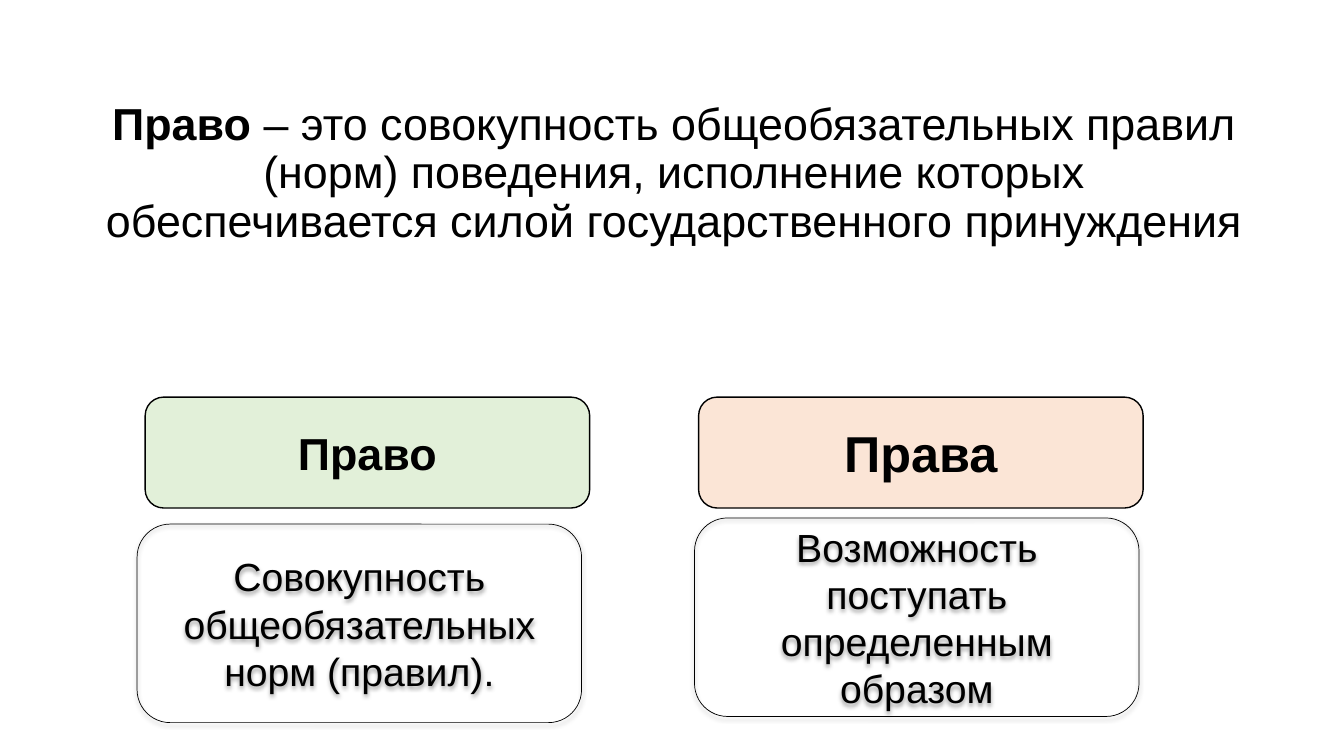
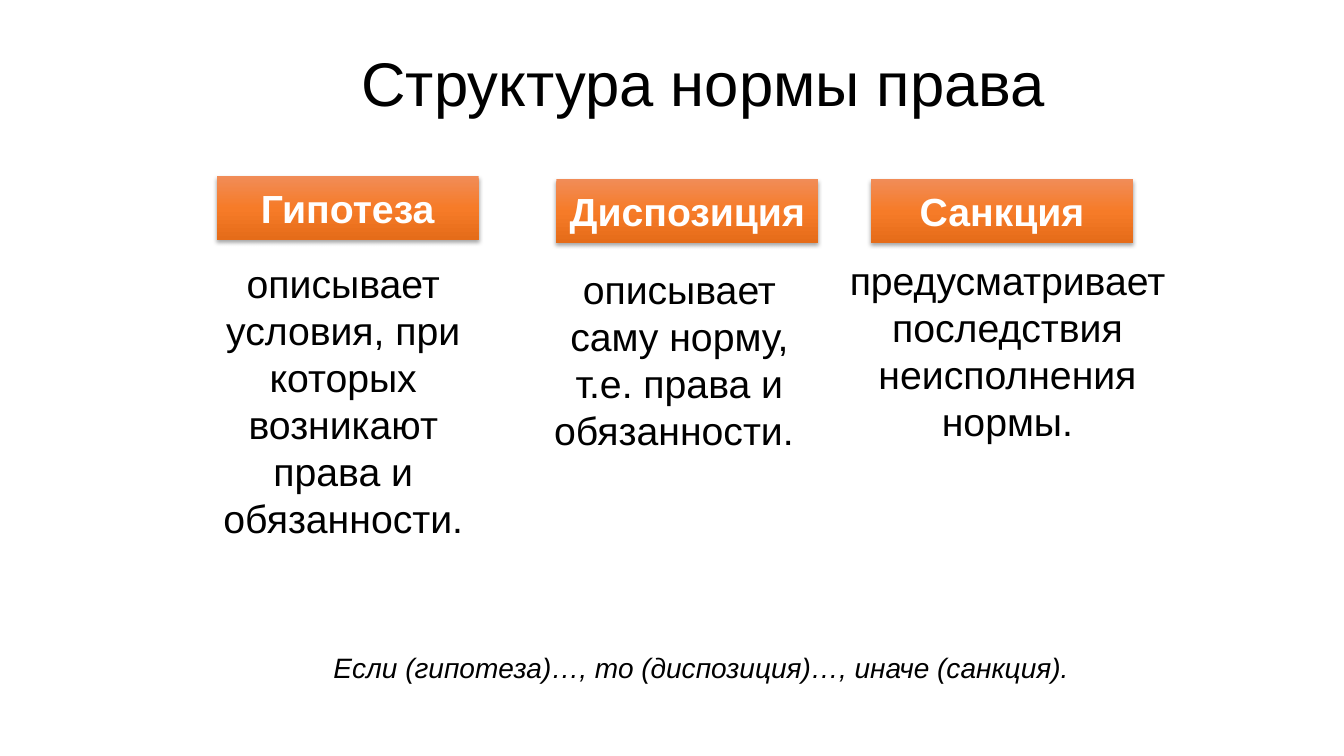
"""Builds two slides on the notion of law and the structure of a legal norm."""
from copy import deepcopy
from dataclasses import dataclass

from lxml.etree import SubElement
from pptx import Presentation
from pptx.dml.color import RGBColor
from pptx.enum.shapes import MSO_SHAPE
from pptx.enum.text import MSO_ANCHOR, MSO_AUTO_SIZE, PP_ALIGN
from pptx.oxml.ns import qn
from pptx.util import Pt


@dataclass(frozen=True)
class Theme:
    font: str = "Arial"
    ink: str = "000000"
    paper: str = "FFFFFF"
    green: str = "E2F0D9"
    peach: str = "FBE5D6"
    orange: tuple = ("F18C57", "F67B28", "E56C19")
    title_size: int = 44
    large_size: int = 36
    lead_size: int = 32
    text_size: int = 28
    note_size: int = 20


class Slides:
    def __init__(self, theme):
        self.theme = theme
        self.deck = Presentation()
        self.deck.slide_width, self.deck.slide_height = Pt(960), Pt(540)
        self.page = None

    def add_page(self, layout_name):
        layout = self.deck.slide_layouts.get_by_name(layout_name)
        self.page = self.deck.slides.add_slide(layout)

    def add_spans(self, box, spans, size, color=None, align=PP_ALIGN.CENTER, italic=False):
        frame = box.text_frame
        frame.word_wrap = True
        para = frame.paragraphs[0]
        para.alignment = align
        for text, bold in spans:
            span = para.add_run()
            span.text = text
            font = span.font
            font.name, font.size = self.theme.font, Pt(size)
            font.bold, font.italic = bold, italic
            font.color.rgb = RGBColor.from_string(color or self.theme.ink)
        return para

    def place(self, box, area):
        box.left, box.top, box.width, box.height = map(Pt, area)
        box.text_frame.auto_size = MSO_AUTO_SIZE.NONE

    def title(self, area, text):
        box = self.page.shapes.title
        self.place(box, area)
        box.text_frame.vertical_anchor = MSO_ANCHOR.MIDDLE
        self.add_spans(box, [(text, False)], self.theme.title_size).line_spacing = 0.9

    def body(self, area, spans):
        box = self.page.placeholders[1]
        self.place(box, area)
        para = self.add_spans(box, spans, self.theme.lead_size)
        para.line_spacing, para.space_before = 0.9, Pt(10)
        properties = para._p.get_or_add_pPr()
        properties.set("marL", "0")
        properties.set("indent", "0")
        SubElement(properties, qn("a:buNone"))
        title = self.page.shapes.title
        title._element.getparent().remove(title._element)

    def text(self, area, text, size, **style):
        box = self.page.shapes.add_textbox(*map(Pt, area))
        self.add_spans(box, [(text, False)], size, **style)

    def shape(self, kind, area):
        box = self.page.shapes.add_shape(kind, *map(Pt, area))
        box.shadow.inherit = False
        box.text_frame.vertical_anchor = MSO_ANCHOR.MIDDLE
        return box

    def shadow(self, box, opacity, distance):
        effects = box._element.spPr.find(qn("a:effectLst"))
        outer = SubElement(effects, qn("a:outerShdw"), blurRad=str(Pt(3.1)),
                           dist=str(Pt(distance)), dir="5400000", rotWithShape="0")
        color = SubElement(outer, qn("a:srgbClr"), val=self.theme.ink)
        SubElement(color, qn("a:alpha"), val=str(opacity * 1000))

    def rounded(self, area, text, size, fill=None):
        box = self.shape(MSO_SHAPE.ROUNDED_RECTANGLE, area)
        frame = box.text_frame
        frame.margin_left = frame.margin_right = Pt(5.8)
        frame.margin_top = frame.margin_bottom = Pt(2.9)
        box.line.color.rgb = RGBColor.from_string(self.theme.ink)
        if fill:
            box.fill.solid()
            box.fill.fore_color.rgb = RGBColor.from_string(fill)
            box.line.width = Pt(1)
        else:
            box.fill.background()
            box.line.width = Pt(0.5)
            self.shadow(box, 38, 1.6)
        self.add_spans(box, [(text, bool(fill))], size)

    def label(self, area, text):
        box = self.shape(MSO_SHAPE.RECTANGLE, area)
        box.line.fill.background()
        box.fill.gradient()
        box.fill.gradient_angle = 270
        stops = box._element.spPr.find(qn("a:gradFill")).find(qn("a:gsLst"))
        stops.append(deepcopy(stops[-1]))
        colors = self.theme.orange
        for index, stop in enumerate(box.fill.gradient_stops):
            stop.position = index / (len(colors) - 1)
            stop.color.rgb = RGBColor.from_string(colors[index])
        self.shadow(box, 35, 1.8)
        self.add_spans(box, [(text, True)], self.theme.text_size, self.theme.paper)


def build_definition(slides):
    theme = slides.theme
    slides.add_page("Title and Content")
    slides.body((67.7, 69, 828, 343), [
        ("Право", True),
        (" – это совокупность общеобязательных правил (норм) поведения, "
         "исполнение которых обеспечивается силой государственного принуждения", False),
    ])
    columns = [
        (103.7, "Право", theme.lead_size, theme.green,
         97.9, 374.4, "Совокупность общеобязательных норм (правил)."),
        (499, "Права", theme.large_size, theme.peach,
         496.1, 370, "Возможность поступать определенным образом"),
    ]
    for left, term, size, fill, text_left, text_top, meaning in columns:
        slides.rounded((left, 283.7, 317.5, 79.2), term, size, fill)
        slides.rounded((text_left, text_top, 317.5, 141.8), meaning, theme.text_size)


def build_structure(slides):
    theme = slides.theme
    slides.add_page("Title Only")
    slides.title((88.6, 9.4, 828, 104.4), "Структура нормы права")
    columns = [
        (154.8, 126, "Гипотеза", (133.9, 181.4, 222.5, 211),
         "описывает условия, при которых возникают права и обязанности."),
        (397.4, 128.2, "Диспозиция", (385.9, 185.8, 198.7, 143.3),
         "описывает саму норму, т.е. права и обязанности. "),
        (622.1, 128.2, "Санкция", (599, 179.3, 241.2, 143.3),
         "предусматривает последствия неисполнения нормы."),
    ]
    for left, top, term, text_area, meaning in columns:
        slides.label((left, top, 187.2, 45.4), term)
        slides.text(text_area, meaning, theme.text_size)
    slides.text((231.1, 460.8, 571, 31.7),
                "Если (гипотеза)…, то (диспозиция)…, иначе (санкция).",
                theme.note_size, align=PP_ALIGN.LEFT, italic=True)


def main():
    slides = Slides(Theme())
    build_definition(slides)
    build_structure(slides)
    slides.deck.save("out.pptx")


if __name__ == "__main__":
    main()
